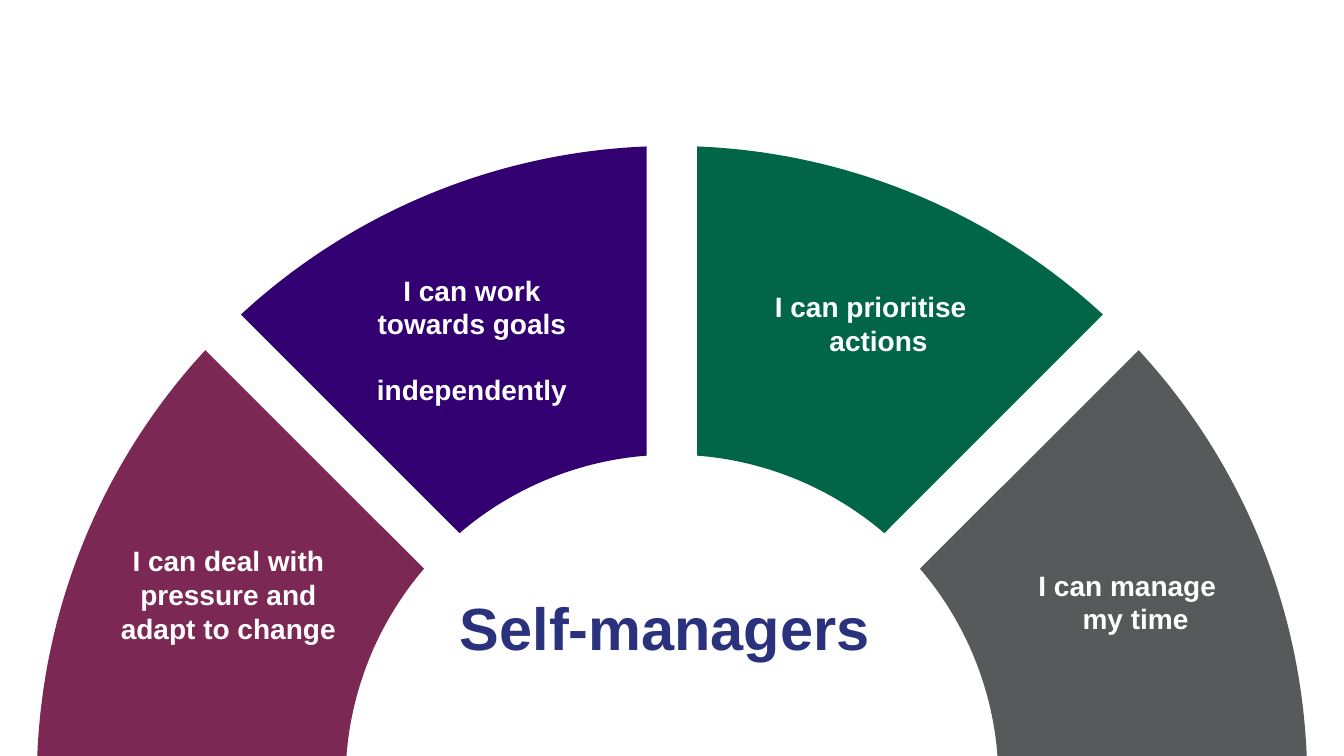
from dataclasses import dataclass
from math import asin, cos, pi, sin

from pptx import Presentation
from pptx.dml.color import RGBColor
from pptx.enum.text import MSO_ANCHOR, MSO_AUTO_SIZE, PP_ALIGN as ALIGN
from pptx.util import Pt

PX = 9525
COLORS = {
    "grey": "58595B",
    "green": "006647",
    "violet": "330072",
    "plum": "7C2854",
    "navy": "2A317D",
    "white": "FFFFFF",
}
SECTORS = ("grey", "green", "violet", "plum")
CENTER_X, CENTER_Y = 640, 744
OUTER, INNER, HALF_GAP = 605, 311, 24
ARC_STEPS = 40


@dataclass(frozen=True)
class Label:
    x: int
    y: int
    w: int
    h: int
    paragraphs: tuple[tuple[str, ...], ...]
    size: float = 20
    color: str = "white"
    align: ALIGN = ALIGN.CENTER
    margin: int = 0
    indent: int = 0


TITLE = Label(358, 258, 183, 128, (("I can work", "towards goals"), ("independently",)))
LABELS = (
    Label(438, 561, 395, 71, (("Self-managers",),), 42.5, "navy", ALIGN.LEFT),
    Label(988, 539, 174, 66, (("I can manage", "my time"),),
          align=ALIGN.LEFT, margin=43, indent=-42),
    Label(114, 516, 207, 99, (("I can deal with", "pressure and", "adapt to change"),)),
    Label(736, 274, 187, 66, (("I can prioritise", "actions"),),
          align=ALIGN.LEFT, margin=54, indent=-52),
)


def rgb(name: str) -> RGBColor:
    """Look up a named colour."""
    return RGBColor.from_string(COLORS[name])


def arc(radius: int, start: float, end: float) -> list[tuple[int, int]]:
    """Points in EMU along an arc, trimmed by half a gap at both ends."""
    trim = asin(HALF_GAP / radius)
    first, sweep = start + trim, end - start - 2 * trim
    angles = [first + sweep * i / ARC_STEPS for i in range(ARC_STEPS + 1)]
    return [
        (round((CENTER_X + radius * cos(a)) * PX), round((CENTER_Y - radius * sin(a)) * PX))
        for a in angles
    ]


def add_sector(slide, index: int, color: str) -> None:
    """Draw one ring sector, an eighth of a turn wide."""
    start, end = index * pi / 4, (index + 1) * pi / 4
    points = arc(OUTER, start, end) + arc(INNER, start, end)[::-1]
    builder = slide.shapes.build_freeform(*points[0], scale=1.0)
    builder.add_line_segments(points[1:], close=True)
    sp = builder.convert_to_shape()
    sp.shadow.inherit = False
    sp.fill.solid()
    sp.fill.fore_color.rgb = rgb(color)
    sp.line.fill.background()


def write_label(sp, label: Label) -> None:
    """Place a text shape and fill it with a label's lines."""
    sp.left, sp.top, sp.width, sp.height = (
        v * PX for v in (label.x, label.y, label.w, label.h)
    )
    tf = sp.text_frame
    tf.word_wrap = True
    tf.auto_size = MSO_AUTO_SIZE.NONE
    tf.vertical_anchor = MSO_ANCHOR.TOP
    tf.margin_left = tf.margin_right = tf.margin_bottom = 0
    tf.margin_top = 2 * PX
    for i, lines in enumerate(label.paragraphs):
        p = tf.add_paragraph() if i else tf.paragraphs[0]
        p.alignment = label.align
        p.space_before = Pt(label.size * 1.15 if i else 0)
        pPr = p._p.get_or_add_pPr()
        pPr.set("marL", str(label.margin * PX))
        pPr.set("indent", str(label.indent * PX))
        for j, line in enumerate(lines):
            if j:
                p.add_line_break()
            r = p.add_run()
            r.text = line
            r.font.name = "Arial"
            r.font.size = Pt(label.size)
            r.font.bold = True
            r.font.color.rgb = rgb(label.color)


def main() -> None:
    """Build the slide and save it."""
    prs = Presentation()
    prs.slide_width, prs.slide_height = 1280 * PX, 720 * PX
    slide = prs.slides.add_slide(prs.slide_layouts.get_by_name("Title Only"))
    for index, color in enumerate(SECTORS):
        add_sector(slide, index, color)
    title = slide.shapes.title
    slide.shapes.element.append(title.element)
    write_label(title, TITLE)
    for label in LABELS:
        write_label(slide.shapes.add_textbox(0, 0, 0, 0), label)
    prs.save("out.pptx")


if __name__ == "__main__":
    main()
